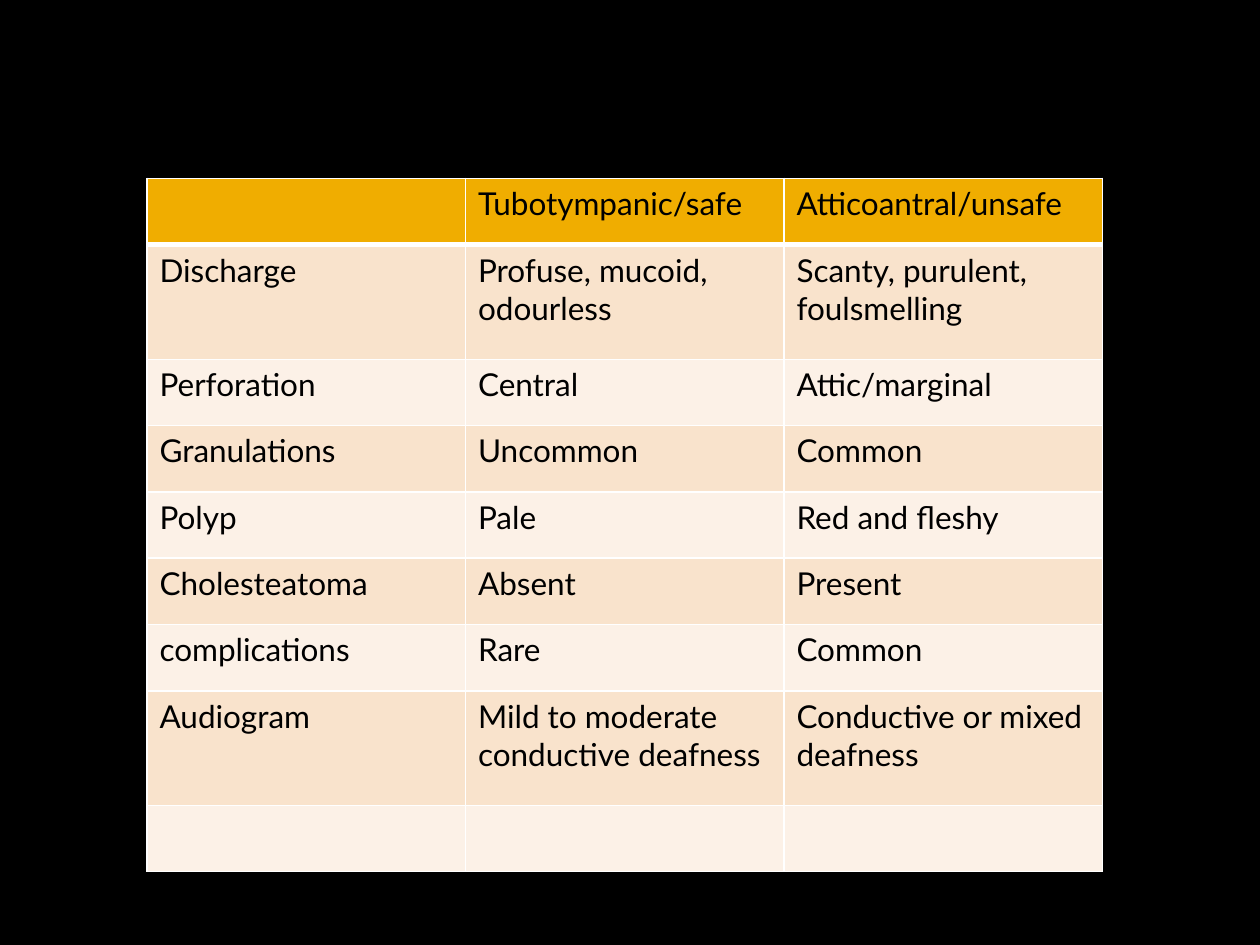
"""Build a slide comparing the tubotympanic and atticoantral types in a table."""
from dataclasses import dataclass

from lxml import etree
from pptx import Presentation
from pptx.dml.color import RGBColor
from pptx.oxml.ns import qn
from pptx.slide import Slide
from pptx.table import _Cell
from pptx.util import Pt

BLACK, WHITE = "000000", "FFFFFF"
HEADER_FILL = "F0AD00"
BAND_FILLS = ("FCF1E7", "F9E3CC")
TEXT_FORMAT = {"name": "Lato", "size": Pt(18), "bold": False}
BORDER_SIDES = ("lnL", "lnR", "lnT", "lnB")
LEFT, TOP, COLUMN_WIDTH = 84, 102, 182
SINGLE_HEIGHT, DOUBLE_HEIGHT = 37.9, 65.4


@dataclass(frozen=True)
class Comparison:
    feature: str = ""
    safe: str = ""
    unsafe: str = ""
    height: float = SINGLE_HEIGHT


COMPARISONS = (
    Comparison("", "Tubotympanic/safe", "Atticoantral/unsafe"),
    Comparison("Discharge", "Profuse, mucoid, odourless",
               "Scanty, purulent, foulsmelling", DOUBLE_HEIGHT),
    Comparison("Perforation", "Central", "Attic/marginal"),
    Comparison("Granulations", "Uncommon", "Common"),
    Comparison("Polyp", "Pale", "Red and fleshy"),
    Comparison("Cholesteatoma", "Absent", "Present"),
    Comparison("complications", "Rare", "Common"),
    Comparison("Audiogram", "Mild to moderate conductive deafness",
               "Conductive or mixed deafness", DOUBLE_HEIGHT),
    Comparison(),
)


def paint(target, color: str) -> None:
    target.solid()
    target.fore_color.rgb = RGBColor.from_string(color)


def add_borders(cell: _Cell, bottom_width: float) -> None:
    properties = cell._tc.get_or_add_tcPr()
    for side in BORDER_SIDES:
        width = bottom_width if side == "lnB" else 1
        line = etree.SubElement(properties, qn(f"a:{side}"), w=str(Pt(width)))
        fill = etree.SubElement(line, qn("a:solidFill"))
        etree.SubElement(fill, qn("a:srgbClr"), val=WHITE)


def fill_cell(cell: _Cell, text: str, color: str, bottom_width: float) -> None:
    add_borders(cell, bottom_width)
    paint(cell.fill, color)
    cell.text = text
    font = cell.text_frame.paragraphs[0].font
    for name, value in TEXT_FORMAT.items():
        setattr(font, name, value)
    paint(font.fill, BLACK)


def add_comparison_table(page: Slide, comparisons: tuple[Comparison, ...]) -> None:
    total_height = sum(item.height for item in comparisons)
    table = page.shapes.add_table(
        len(comparisons), 3, Pt(LEFT), Pt(TOP), Pt(3 * COLUMN_WIDTH), Pt(total_height)
    ).table
    table.horz_banding = False
    for column in table.columns:
        column.width = Pt(COLUMN_WIDTH)
    for index, (row, item) in enumerate(zip(table.rows, comparisons)):
        row.height = Pt(item.height)
        color = BAND_FILLS[index % 2] if index else HEADER_FILL
        for cell, text in zip(row.cells, (item.feature, item.safe, item.unsafe)):
            fill_cell(cell, text, color, 1 if index else 3)


def main() -> None:
    deck = Presentation()
    deck.slide_width, deck.slide_height = Pt(720), Pt(540)
    page = deck.slides.add_slide(deck.slide_layouts[6])
    paint(page.background.fill, BLACK)
    add_comparison_table(page, COMPARISONS)
    deck.save("out.pptx")


if __name__ == "__main__":
    main()
